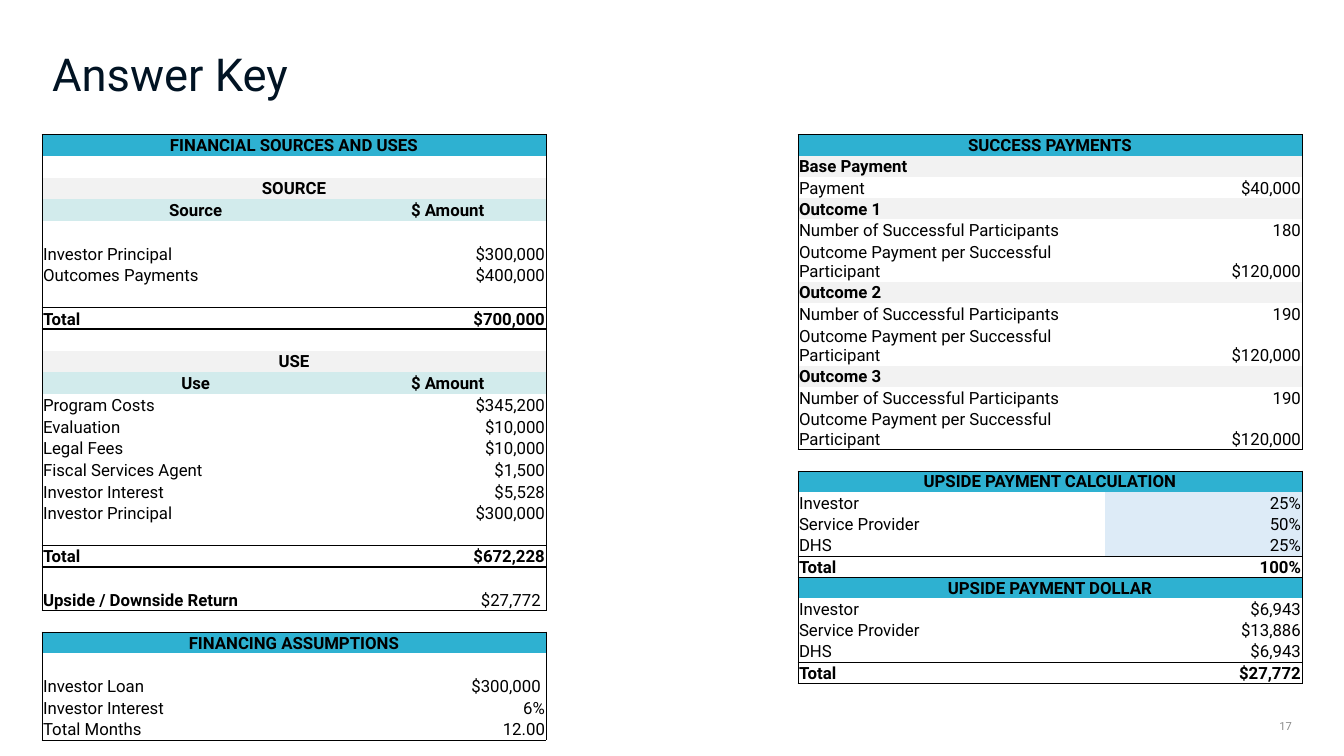
from collections import namedtuple

from lxml import etree
from pptx import Presentation
from pptx.dml.color import RGBColor
from pptx.enum.text import MSO_ANCHOR, PP_ALIGN
from pptx.oxml.ns import qn
from pptx.util import Pt

LEFT, CENTER, RIGHT = PP_ALIGN.LEFT, PP_ALIGN.CENTER, PP_ALIGN.RIGHT
MIDDLE, BOTTOM = MSO_ANCHOR.MIDDLE, MSO_ANCHOR.BOTTOM

BLACK = RGBColor(0x00, 0x00, 0x00)
NAVY = RGBColor(0x01, 0x13, 0x23)
GRAY = RGBColor(0x8C, 0x8C, 0x8C)
TEAL = RGBColor(0x2E, 0xB1, 0xD1)
MINT = RGBColor(0xD2, 0xEB, 0xEC)
SILVER = RGBColor(0xF2, 0xF2, 0xF2)
SKY = RGBColor(0xDD, 0xEB, 0xF7)

NO_STYLE = "{2D5ABB26-0587-4C30-8999-92F81FD0307C}"
COLUMNS = (219.6, 140.4)
LINE_HEIGHT = 14.05
THIN, THICK = 0.5, 2

Row = namedtuple("Row", "fills bold aligns anchor lines merged",
                 defaults=((None, None), (False, False), (LEFT, RIGHT), BOTTOM, 1, False))
HEAD = Row((TEAL, TEAL), (True, True), (CENTER, CENTER), MIDDLE, merged=True)
BAND = HEAD._replace(fills=(SILVER, SILVER))
COLS = Row((MINT, MINT), (True, True), (CENTER, CENTER), MIDDLE)
GROUP = Row((SILVER, SILVER), (True, True), anchor=MIDDLE)
ITEM = Row()
TALL = Row(lines=2)
SHARE = Row(fills=(None, SKY))
RETURN = Row(bold=(True, False))
TOTAL = Row(bold=(True, True))
BLANK = Row(anchor=MIDDLE)
SPACE = "space"

SOURCES_AND_USES = [
    (HEAD, "FINANCIAL SOURCES AND USES"),
    (BLANK,),
    (BAND, "SOURCE"),
    (COLS, "Source", "$ Amount"),
    (BLANK,),
    (ITEM, "Investor Principal", "$300,000"),
    (ITEM, "Outcomes Payments", "$400,000"),
    (BLANK,),
    (TOTAL, "Total", "$700,000"),
    (BLANK,),
    (BAND, "USE"),
    (COLS, "Use", "$ Amount"),
    (ITEM, "Program Costs", "$345,200"),
    (ITEM, "Evaluation", "$10,000"),
    (ITEM, "Legal Fees", "$10,000"),
    (ITEM, "Fiscal Services Agent", "$1,500"),
    (ITEM, "Investor Interest", "$5,528"),
    (ITEM, "Investor Principal", "$300,000"),
    (BLANK,),
    (TOTAL, "Total", "$672,228"),
    (BLANK,),
    (RETURN, "Upside / Downside Return", "$27,772 "),
    (SPACE,),
    (HEAD, "FINANCING ASSUMPTIONS"),
    (BLANK,),
    (ITEM, "Investor Loan", "$300,000 "),
    (ITEM, "Investor Interest", "6%"),
    (ITEM, "Total Months", "12.00"),
]

PAYMENTS = [(HEAD, "SUCCESS PAYMENTS"), (GROUP, "Base Payment"), (ITEM, "Payment", "$40,000")]
for number, participants in enumerate(("180", "190", "190"), 1):
    PAYMENTS += [
        (GROUP, f"Outcome {number}"),
        (ITEM, "Number of Successful Participants", participants),
        (TALL, "Outcome Payment per Successful Participant", "$120,000"),
    ]
PAYMENTS += [
    (SPACE,),
    (HEAD, "UPSIDE PAYMENT CALCULATION"),
    (SHARE, "Investor", "25%"),
    (SHARE, "Service Provider", "50%"),
    (SHARE, "DHS", "25%"),
    (TOTAL, "Total", "100%"),
    (HEAD, "UPSIDE PAYMENT DOLLAR"),
    (ITEM, "Investor", "$6,943"),
    (ITEM, "Service Provider", "$13,886"),
    (ITEM, "DHS", "$6,943"),
    (TOTAL, "Total", "$27,772"),
]


def rule_between(above, below, total_width):
    if above is TOTAL:
        return total_width
    if None in (above, below) or SPACE in (above, below) or below in (HEAD, TOTAL):
        return THIN
    return 0


class Deck:
    """Draws styled elements on the current slide."""

    font = "Roboto"

    def __init__(self, prs):
        self.s = prs.slides.add_slide(prs.slide_layouts[5])

    def fill_text(self, tf, text, size, color, bold=False, align=LEFT):
        tf.word_wrap = True
        tf.text = text
        p = tf.paragraphs[0]
        p.alignment = align
        for r in p.runs:
            r.font.name, r.font.size, r.font.bold = self.font, Pt(size), bold
            r.font.color.rgb = color
        if not text:
            etree.SubElement(p._p, qn("a:endParaRPr"), sz=str(size * 100))
        return p

    def title(self, text, x, y, w, h):
        sp = self.s.shapes.title
        sp.left, sp.top, sp.width, sp.height = Pt(x), Pt(y), Pt(w), Pt(h)
        tf = sp.text_frame
        tf.vertical_anchor = MIDDLE
        tf.margin_bottom = Pt(37.6)
        self.fill_text(tf, text, 32.4, NAVY).line_spacing = 0.9

    def page_number(self, text, x, y, w, h):
        tf = self.s.shapes.add_textbox(Pt(x), Pt(y), Pt(w), Pt(h)).text_frame
        tf.vertical_anchor = MIDDLE
        self.fill_text(tf, text, 8, GRAY, align=RIGHT)

    def border(self, cell, side, width):
        ln = etree.SubElement(cell._tc.get_or_add_tcPr(), qn(f"a:ln{side}"), w=str(Pt(width)))
        if width:
            fill = etree.SubElement(ln, qn("a:solidFill"))
            etree.SubElement(fill, qn("a:srgbClr"), val=str(BLACK))
        else:
            etree.SubElement(ln, qn("a:noFill"))

    def cell(self, cell, text, style, column, borders):
        cell.margin_left = cell.margin_right = cell.margin_top = Pt(0.75)
        cell.margin_bottom = 0
        cell.vertical_anchor = style.anchor
        for side, width in zip("LRTB", borders):
            self.border(cell, side, width)
        if style.fills[column]:
            cell.fill.solid()
            cell.fill.fore_color.rgb = style.fills[column]
        else:
            cell.fill.background()
        self.fill_text(cell.text_frame, text, 12, BLACK, style.bold[column], style.aligns[column])

    def table(self, rows, x, y, padding, total_width):
        kinds = [row[0] for row in rows]
        styles = [BLANK if kind == SPACE else kind for kind in kinds]
        heights = [style.lines * LINE_HEIGHT + padding for style in styles]
        frame = self.s.shapes.add_table(len(rows), 2, Pt(x), Pt(y), Pt(sum(COLUMNS)), Pt(sum(heights)))
        tbl = frame.table
        tbl.first_row = tbl.horz_banding = False
        tbl._tbl.tblPr.find(qn("a:tableStyleId")).text = NO_STYLE
        for column, width in zip(tbl.columns, COLUMNS):
            column.width = Pt(width)
        edges = [None, *kinds, None]
        rules = [rule_between(a, b, total_width) for a, b in zip(edges, edges[1:])]
        for i, (row, style) in enumerate(zip(rows, styles)):
            tbl.rows[i].height = Pt(heights[i])
            if style.merged:
                tbl.cell(i, 0).merge(tbl.cell(i, 1))
            side = 0 if kinds[i] == SPACE else THIN
            texts = (*row[1:], "", "")
            for j in range(2):
                left = side if j == 0 else 0
                right = side if j == 1 or style.merged else 0
                self.cell(tbl.cell(i, j), texts[j], style, j, (left, right, rules[i], rules[i + 1]))


def main():
    prs = Presentation()
    prs.slide_width, prs.slide_height = Pt(960), Pt(540)
    deck = Deck(prs)
    deck.title("Answer Key", 30, 36, 900, 72)
    deck.page_number("17", 732, 504, 198, 28.8)
    deck.table(SOURCES_AND_USES, 30, 96, 1.4, THICK)
    deck.table(PAYMENTS, 570, 96, 0.6, THIN)
    prs.save("out.pptx")


if __name__ == "__main__":
    main()
